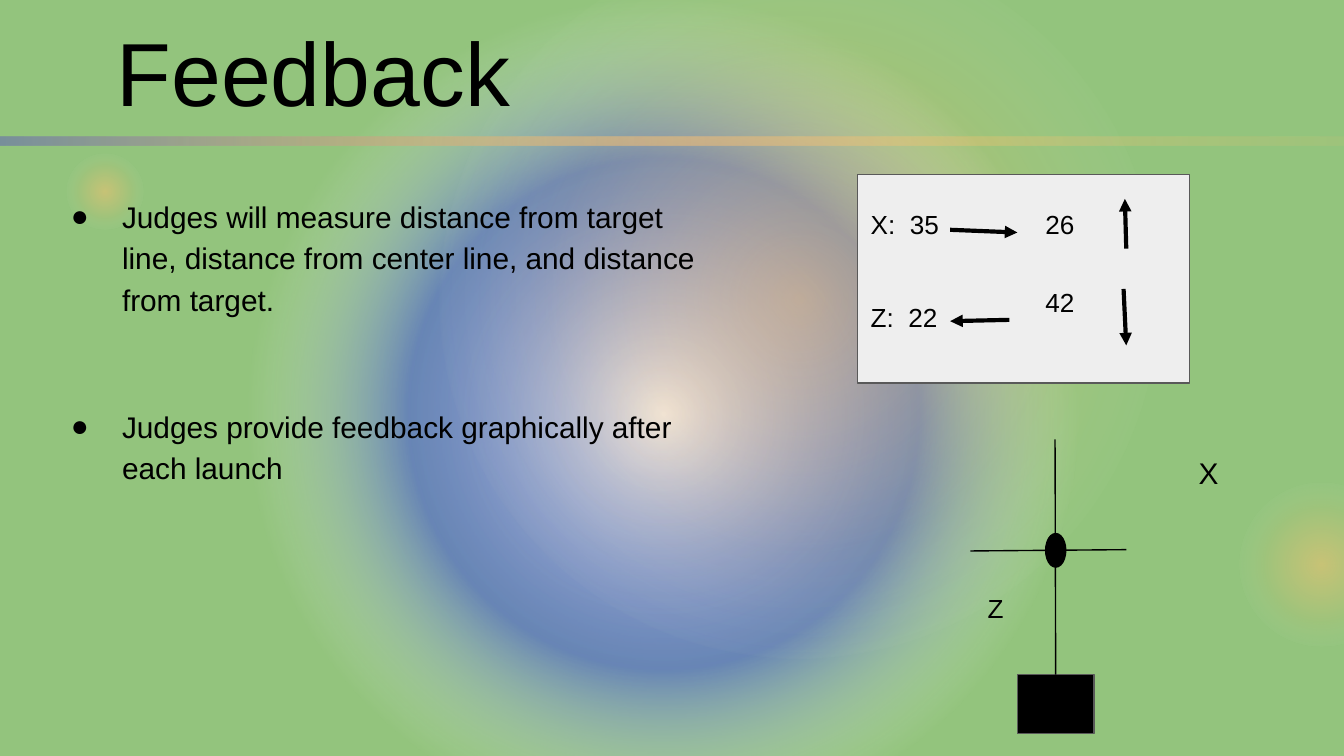
import dataclasses

import lxml.etree
import pptx
import pptx.dml.color
import pptx.enum.shapes
import pptx.enum.text
import pptx.oxml.ns
import pptx.util

Inches = pptx.util.Inches
SHAPES = pptx.enum.shapes.MSO_SHAPE
ANCHOR = pptx.enum.text.MSO_ANCHOR
qn = pptx.oxml.ns.qn


@dataclasses.dataclass(frozen=True)
class Theme:
    font: str = "Arial"
    ink: str = "000000"
    background: str = "93C47D"
    panel: str = "EEEEEE"
    border: str = "595959"
    title_size: int = 48
    body_size: int = 16
    label_size: int = 14
    thin: float = 0.75
    thick: float = 2.25
    blue_glow: tuple = ((0, "EEEEEE", 100), (43, "4858DF", 57),
                        (70, "FFFFFF", 0), (100, "FFFFFF", 0))
    amber_glow: tuple = ((0, "FFC270", 49), (50, "FFC270", 10),
                         (75, "FFFFFF", 0), (100, "FFFFFF", 0))
    rule: tuple = ((0, "78909C", 100), (50, "FFC270", 52), (100, "FFC270", 10))


THEME = Theme()


def rgb(value):
    return pptx.dml.color.RGBColor.from_string(value)


def add_child(parent, tag, **attributes):
    child = lxml.etree.SubElement(parent, qn(tag))
    for key, value in attributes.items():
        child.set(key, str(value))
    return child


def add_plain_shape(slide, kind, box):
    shape = slide.shapes.add_shape(kind, *map(Inches, box))
    shape.shadow.inherit = False
    shape.line.fill.background()
    return shape


def add_solid(slide, kind, box, fill, border):
    shape = add_plain_shape(slide, kind, box)
    shape.fill.solid()
    shape.fill.fore_color.rgb = rgb(fill)
    shape.line.color.rgb = rgb(border)
    shape.line.width = pptx.util.Pt(THEME.thin)
    return shape


def add_gradient(slide, kind, box, stops, angle=None):
    shape = add_plain_shape(slide, kind, box)
    geometry = shape.element.spPr.find(qn("a:prstGeom"))
    gradient = lxml.etree.Element(qn("a:gradFill"), rotWithShape="1")
    stop_list = add_child(gradient, "a:gsLst")
    for position, color, opacity in stops:
        stop = add_child(stop_list, "a:gs", pos=position * 1000)
        tint = add_child(stop, "a:srgbClr", val=color)
        add_child(tint, "a:alpha", val=opacity * 1000)
    if angle is None:
        center = add_child(gradient, "a:path", path="circle")
        add_child(center, "a:fillToRect", l=50000, t=50000, r=50000, b=50000)
    else:
        add_child(gradient, "a:lin", ang=angle * 60000, scaled=0)
    geometry.addnext(gradient)
    return shape


def add_text(slide, box, lines, size, anchor=ANCHOR.TOP, grow=False):
    text_box = slide.shapes.add_textbox(*map(Inches, box))
    frame = text_box.text_frame
    frame.text = "\n".join(lines)
    frame.word_wrap = True
    frame.vertical_anchor = anchor
    frame.margin_left = frame.margin_right = Inches(0.1)
    frame.margin_top = frame.margin_bottom = Inches(0.1)
    if grow:
        frame.auto_size = pptx.enum.text.MSO_AUTO_SIZE.SHAPE_TO_FIT_TEXT
    for paragraph in frame.paragraphs:
        for run in paragraph.runs:
            run.font.name = THEME.font
            run.font.size = pptx.util.Pt(size)
            run.font.color.rgb = rgb(THEME.ink)
    return frame.paragraphs


def add_label(slide, left, top, width, text):
    add_text(slide, (left, top, width, 0.44), [text], THEME.label_size, grow=True)


def indent(paragraph, left, first_line=0):
    paragraph.line_spacing = 1.15
    properties = paragraph._p.get_or_add_pPr()
    properties.set("marL", str(Inches(left)))
    properties.set("indent", str(Inches(first_line)))
    return properties


def add_bullets(slide, box, lines, gap):
    for index, paragraph in enumerate(add_text(slide, box, lines, THEME.body_size)):
        paragraph.space_before = pptx.util.Pt(gap if index else 0)
        properties = indent(paragraph, 0.5, -0.38)
        bullet_color = add_child(properties, "a:buClr")
        add_child(bullet_color, "a:srgbClr", val=THEME.ink)
        add_child(properties, "a:buFont", typeface=THEME.font)
        add_child(properties, "a:buChar", char="●")


def add_line(slide, start, end, width, arrow=False):
    line = slide.shapes.add_connector(
        pptx.enum.shapes.MSO_CONNECTOR.STRAIGHT, *map(Inches, start + end))
    line.line.color.rgb = rgb(THEME.ink)
    line.line.width = pptx.util.Pt(width)
    properties = line.element.spPr
    if arrow:
        add_child(properties.find(qn("a:ln")), "a:tailEnd", type="triangle")
    add_child(properties, "a:effectLst")
    return line


def add_backdrop(slide):
    slide.background.fill.solid()
    slide.background.fill.fore_color.rgb = rgb(THEME.background)
    add_gradient(slide, SHAPES.OVAL, (1.81, -0.05, 6.25, 6.25), THEME.blue_glow)
    for left, top, size in ((3.27, -0.45, 5.35), (0.5, 1.14, 0.57), (9.22, 3.59, 1.22)):
        add_gradient(slide, SHAPES.OVAL, (left, top, size, size), THEME.amber_glow)
    title_rule = add_gradient(
        slide, SHAPES.RECTANGLE, (4.97, -3.95, 0.06, 10), THEME.rule, angle=90)
    title_rule.rotation = 270


def add_score_panel(slide):
    add_solid(slide, SHAPES.FLOWCHART_PROCESS, (6.38, 1.3, 2.47, 1.55),
              THEME.panel, THEME.border)
    for label in ((6.38, 1.45, 0.79, "X:  35"), (6.38, 2.14, 1.06, "Z:  22"),
                  (7.68, 1.45, 0.57, "26"), (7.68, 2.03, 0.57, "42")):
        add_label(slide, *label)
    for start, end in (((7.07, 1.71), (7.57, 1.73)), ((7.51, 2.38), (7.07, 2.39)),
                       ((8.36, 2.15), (8.38, 2.57)), ((8.38, 1.85), (8.37, 1.48))):
        add_line(slide, start, end, THEME.thick, arrow=True)


def add_target_diagram(slide):
    x_label = add_text(slide, (5.72, 3.24, 3.79, 2.3), ["X"], THEME.body_size)[0]
    indent(x_label, 3.1)
    launcher = add_solid(slide, SHAPES.RECTANGLE, (7.57, 5.02, 0.57, 0.44),
                         THEME.ink, THEME.border)
    center_line = add_line(slide, (7.85, 5.02), (7.85, 3.27), THEME.thin)
    center_line.begin_connect(launcher, 0)
    add_line(slide, (7.22, 4.1), (8.38, 4.09), THEME.thin)
    add_solid(slide, SHAPES.FLOWCHART_CONNECTOR, (7.78, 3.97, 0.15, 0.25),
              THEME.ink, THEME.ink)
    add_label(slide, 7.25, 4.31, 0.32, "Z")


def main():
    presentation = pptx.Presentation()
    presentation.slide_width = Inches(10)
    presentation.slide_height = Inches(10) * 9 // 16
    slide = presentation.slides.add_slide(presentation.slide_layouts[6])
    add_backdrop(slide)
    add_text(slide, (0.77, 0, 8.25, 1.05), ["Feedback"], THEME.title_size, ANCHOR.MIDDLE)
    add_bullets(slide, (0.31, 1.34, 5, 2.97), [
        "Judges will measure distance from target line, distance from center line, "
        "and distance from target.",
        "Judges provide feedback graphically after each launch",
    ], gap=46)
    add_score_panel(slide)
    add_target_diagram(slide)
    presentation.save("out.pptx")


if __name__ == "__main__":
    main()
